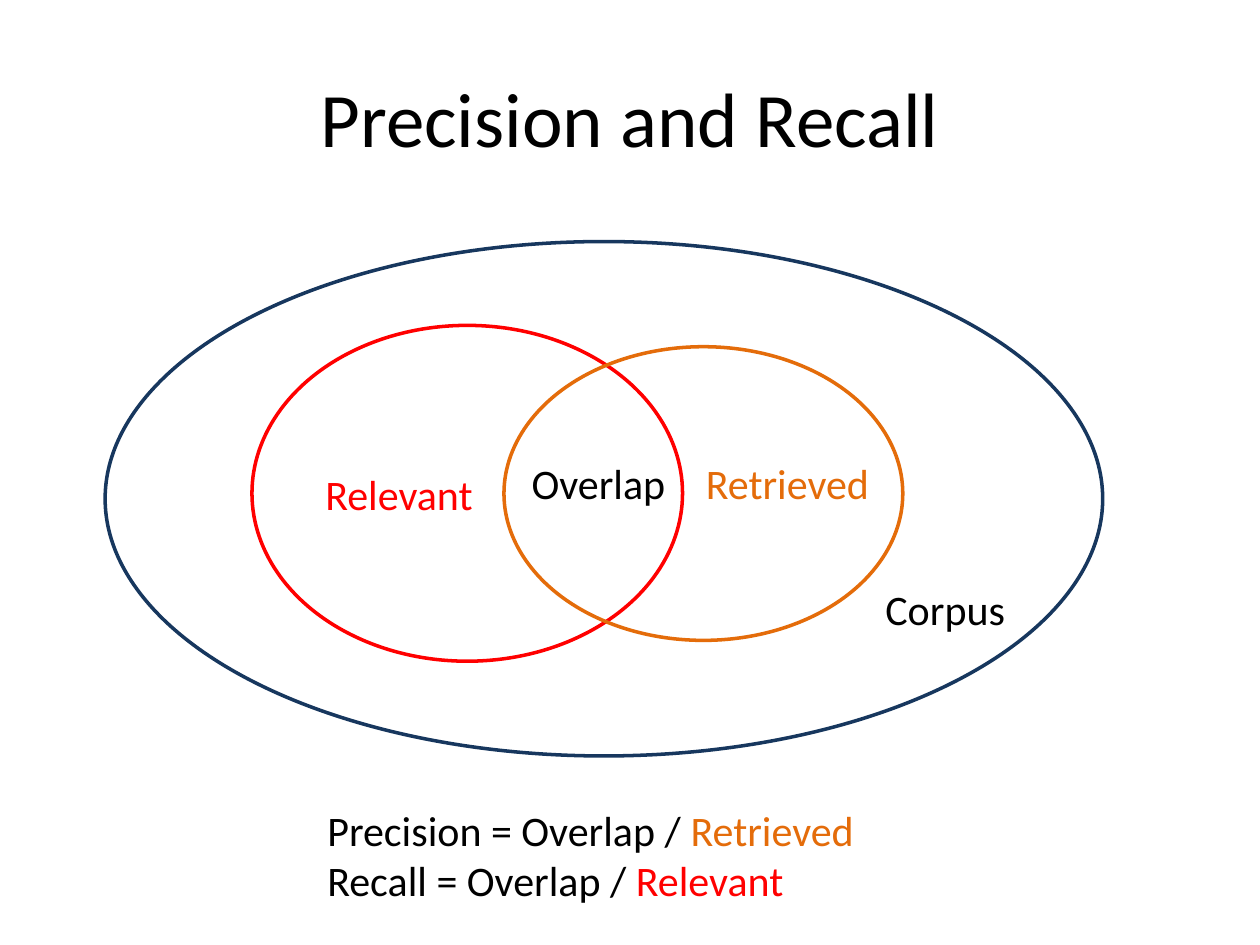
import pptx
import pptx.util
import pptx.dml.color
import pptx.enum.shapes
import pptx.enum.text

Cm = pptx.util.Cm
Pt = pptx.util.Pt
ALIGN = pptx.enum.text.PP_ALIGN
HUES = {"ink": "000000", "corpus": "17375E", "rel": "FF0000", "ret": "E46C0A"}


def color(name):
    return pptx.dml.color.RGBColor.from_string(HUES[name])


def write(frame, *lines, size=24, align=ALIGN.CENTER):
    """Fill a frame; each line is a list of (words, hue) runs."""
    frame.word_wrap = True
    for i, line in enumerate(lines):
        para = frame.paragraphs[0] if i == 0 else frame.add_paragraph()
        para.alignment = align
        for words, hue in line:
            run = para.add_run()
            run.text = words
            run.font.name = "Calibri"
            run.font.size = Pt(size)
            run.font.color.rgb = color(hue)


def add_text(slide, box, *lines, **form):
    frame = slide.shapes.add_textbox(*map(Cm, box)).text_frame
    write(frame, *lines, **form)
    frame.auto_size = pptx.enum.text.MSO_AUTO_SIZE.SHAPE_TO_FIT_TEXT


def add_title(slide, box, words):
    title = slide.shapes.title
    title.left, title.top, title.width, title.height = map(Cm, box)
    title.text_frame.vertical_anchor = pptx.enum.text.MSO_ANCHOR.MIDDLE
    write(title.text_frame, [(words, "ink")], size=44)


def add_venn(slide, box):
    left, top, width, height = box
    # Sets: offset from the box, size, outline
    rings = [
        (0, 0, width, height, "corpus"),
        (2.96, 1.69, 8.68, 6.77, "rel"),
        (8.04, 2.12, 8.04, 5.92, "ret"),
    ]
    for x, y, w, h, hue in rings:
        ring = slide.shapes.add_shape(
            pptx.enum.shapes.MSO_SHAPE.OVAL,
            Cm(left + x), Cm(top + y), Cm(w), Cm(h))
        ring.shadow.inherit = False
        ring.fill.background()
        ring.line.color.rgb = color(hue)
        ring.line.width = Pt(2)
    # Set names
    labels = [
        ("Corpus", 14.82, 6.77, "ink"),
        ("Retrieved", 11.64, 4.23, "ret"),
        ("Relevant", 3.81, 4.45, "rel"),
        ("Overlap", 7.83, 4.23, "ink"),
    ]
    for words, x, y, hue in labels:
        add_text(slide, (left + x, top + y, 4.23, 1.28), [(words, hue)])


def add_rules(slide, box):
    add_text(
        slide, box,
        [("Precision = Overlap / ", "ink"), ("Retrieved", "ret")],
        [("Recall = Overlap / ", "ink"), ("Relevant", "rel")],
        align=ALIGN.LEFT)


def main():
    deck = pptx.Presentation()
    deck.slide_width, deck.slide_height = Cm(25.4), Cm(19.05)
    slide = deck.slides.add_slide(deck.slide_layouts[5])
    add_title(slide, (1.27, 0.76, 22.86, 3.18), "Precision and Recall")
    add_venn(slide, (2.12, 4.87, 20.11, 10.37))
    add_rules(slide, (6.35, 16.09, 11.85, 2.31))
    deck.save("out.pptx")


if __name__ == "__main__":
    main()
